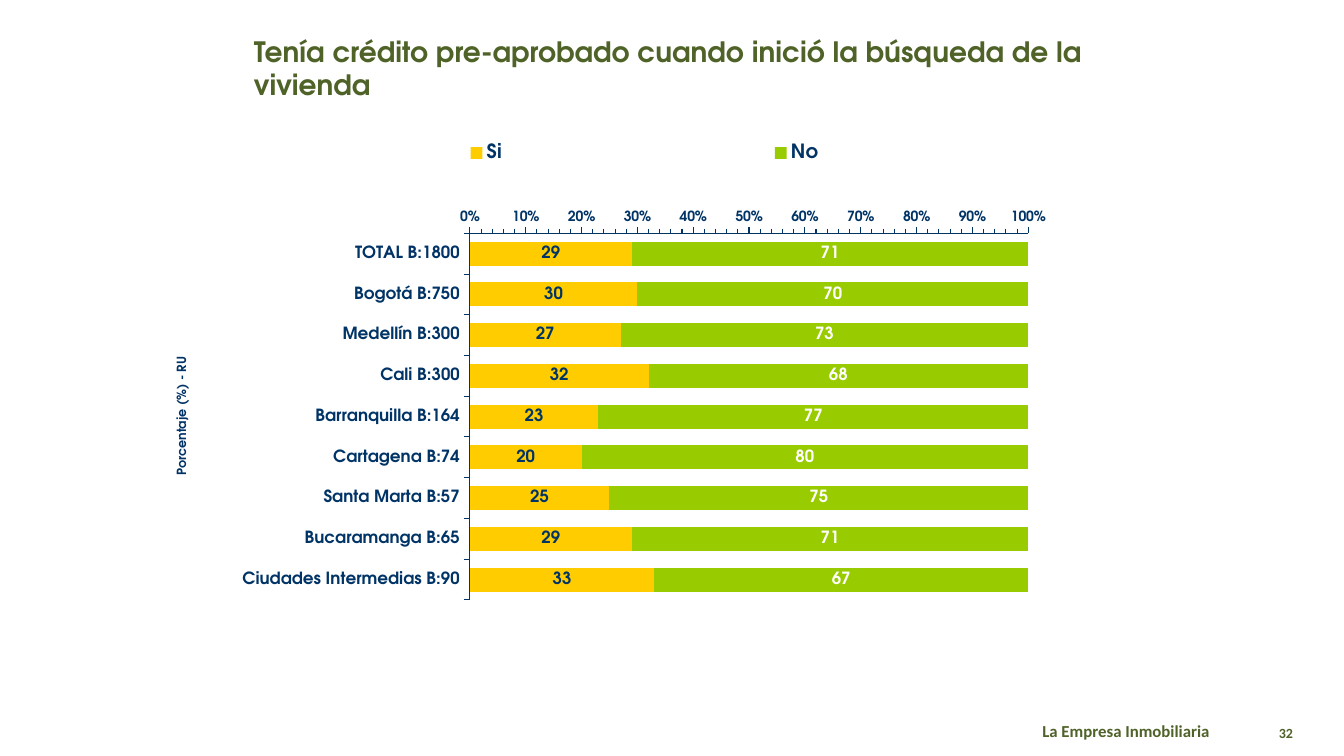
"""Build the pre-approved credit slide with its stacked bar chart by city."""
from dataclasses import dataclass

from pptx import Presentation, oxml
from pptx import util as u
from pptx.chart import data as cd
from pptx.dml.color import RGBColor
from pptx.enum import chart as ch, shapes, text
from pptx.oxml import ns

WIDTH, HEIGHT = u.Inches(13.33), u.Inches(7.5)
COLORS = {
    "white": "FFFFFF",
    "olive": "4F6228",
    "navy": "003366",
    "yellow": "FFCC00",
    "lime": "99CC00",
}
HEADING_FONT, FOOTER_FONT = "TeX Gyre Adventor", "Calibri"


@dataclass(frozen=True)
class Area:
    """Position and size in percent of the slide."""
    left: float
    top: float
    width: float
    height: float

    def frame(self) -> tuple[int, int, int, int]:
        return (int(WIDTH * self.left / 100), int(HEIGHT * self.top / 100),
                int(WIDTH * self.width / 100), int(HEIGHT * self.height / 100))


@dataclass(frozen=True)
class Label:
    words: str
    area: Area
    size: float
    font: str
    color: str
    align: text.PP_ALIGN = text.PP_ALIGN.LEFT
    anchor: text.MSO_ANCHOR = text.MSO_ANCHOR.TOP
    rotation: int = 0
    inset: tuple[float, float] = (0.1, 0.05)


@dataclass(frozen=True)
class Answer:
    name: str
    values: tuple[int, ...]
    fill: str
    label_color: str


CHART_AREA = Area(12.83, 14.27, 67.89, 71.87)
PAGE_NUMBER = Label("32", Area(93.32, 94.53, 4.73, 4.8), 10, FOOTER_FONT, "olive",
                    text.PP_ALIGN.CENTER, text.MSO_ANCHOR.MIDDLE, inset=(0, 0.05))
LABELS = (
    Label("La Empresa Inmobiliaria", Area(76.82, 94.67, 18.08, 4.4),
          12, FOOTER_FONT, "olive"),
    Label("Porcentaje (%) - RU", Area(7.43, 53.47, 12.08, 3.07), 9, HEADING_FONT,
          "navy", text.PP_ALIGN.CENTER, rotation=270, inset=(0.07, 0.04)),
    Label("Tenía crédito pre-aprobado cuando inició la búsqueda de la vivienda",
          Area(18.15, 3.87, 63.77, 10.53), 20, HEADING_FONT, "olive"),
)
CITIES = ("TOTAL B:1800", "Bogotá B:750", "Medellín B:300", "Cali B:300",
          "Barranquilla B:164", "Cartagena B:74", "Santa Marta B:57",
          "Bucaramanga B:65", "Ciudades Intermedias B:90")
ANSWERS = (
    Answer("Si", (29, 30, 27, 32, 23, 20, 25, 29, 33), "yellow", "navy"),
    Answer("No", (71, 70, 73, 68, 77, 80, 75, 71, 67), "lime", "white"),
)


def rgb(name: str) -> RGBColor:
    return RGBColor.from_string(COLORS[name])


def style_font(font, size: float, color: str, face: str = HEADING_FONT) -> None:
    font.size, font.bold, font.name = u.Pt(size), True, face
    font.color.rgb = rgb(color)


def write_label(box, label: Label) -> None:
    box.rotation = label.rotation
    frame = box.text_frame
    frame.word_wrap = True
    frame.vertical_anchor = label.anchor
    frame.margin_left = frame.margin_right = u.Inches(label.inset[0])
    frame.margin_top = frame.margin_bottom = u.Inches(label.inset[1])
    para = frame.paragraphs[0]
    para.alignment = label.align
    span = para.add_run()
    span.text = label.words
    style_font(span.font, label.size, label.color, label.font)


def add_page_number(page) -> None:
    badge = page.shapes.add_shape(shapes.MSO_SHAPE.OVAL, *PAGE_NUMBER.area.frame())
    badge.shadow.inherit = False
    badge.fill.solid()
    badge.fill.fore_color.rgb = rgb("white")
    badge.line.color.rgb = rgb("white")
    badge.line.width = u.Pt(2)
    write_label(badge, PAGE_NUMBER)


def place_part(parent, index: int, area: Area, inner: bool = False) -> None:
    """Give a chart part a manual layout in percent of the chart."""
    for old in parent.findall(ns.qn("c:layout")):
        parent.remove(old)
    target = '<c:layoutTarget val="inner"/>' if inner else ""
    modes = '<c:xMode val="edge"/><c:yMode val="edge"/>'
    sides = zip("xywh", (area.left, area.top, area.width, area.height))
    numbers = "".join(f'<c:{side} val="{share / 100:.3f}"/>' for side, share in sides)
    parent.insert(index, oxml.parse_xml(
        f'<c:layout {ns.nsdecls("c")}><c:manualLayout>{target}{modes}{numbers}'
        '</c:manualLayout></c:layout>'))


def style_axis(axis, size: float) -> None:
    axis.has_major_gridlines = False
    axis.major_tick_mark = ch.XL_TICK_MARK.OUTSIDE
    axis.format.line.color.rgb = rgb("navy")
    axis.format.line.width = u.Pt(0.75)
    style_font(axis.tick_labels.font, size, "navy")


def add_credit_chart(page) -> None:
    data = cd.CategoryChartData(number_format="0")
    data.categories = CITIES
    for answer in ANSWERS:
        data.add_series(answer.name, answer.values)
    chart = page.shapes.add_chart(ch.XL_CHART_TYPE.BAR_STACKED_100,
                                  *CHART_AREA.frame(), data).chart
    chart.has_title = False
    style_font(chart.font, 12, "navy")

    plot = chart.plots[0]
    plot.vary_by_categories = False
    plot.gap_width, plot.overlap = 70, 100
    for series, answer in zip(plot.series, ANSWERS):
        series.format.fill.solid()
        series.format.fill.fore_color.rgb = rgb(answer.fill)
        labels = series.data_labels
        labels.show_value = True
        labels.number_format, labels.number_format_is_linked = "0", False
        labels.position = ch.XL_LABEL_POSITION.CENTER
        style_font(labels.font, 12, answer.label_color)

    cities, shares = chart.category_axis, chart.value_axis
    style_axis(cities, 12)
    cities.reverse_order = True
    cities.crosses = ch.XL_AXIS_CROSSES.MAXIMUM
    style_axis(shares, 10)
    shares.minor_tick_mark = ch.XL_TICK_MARK.OUTSIDE
    shares.minimum_scale, shares.maximum_scale = 0, 1
    shares.major_unit, shares.minor_unit = 0.1, 0.02
    shares.tick_labels.number_format = "0%"
    shares.tick_labels.number_format_is_linked = False

    chart.has_legend = True
    legend = chart.legend
    legend.position = ch.XL_LEGEND_POSITION.TOP
    legend.include_in_layout = False
    style_font(legend.font, 14, "navy")
    legend_part = chart.element.find(".//" + ns.qn("c:legend"))
    place_part(legend_part, 1, Area(3.5, 3.8, 96.5, 9))
    plot_part = chart.element.find(".//" + ns.qn("c:plotArea"))
    place_part(plot_part, 0, Area(32.6, 23.1, 61.2, 67.5), inner=True)


def main() -> None:
    deck = Presentation()
    deck.slide_width, deck.slide_height = WIDTH, HEIGHT
    page = deck.slides.add_slide(deck.slide_layouts[6])
    add_page_number(page)
    add_credit_chart(page)
    for label in LABELS:
        write_label(page.shapes.add_textbox(*label.area.frame()), label)
    deck.save("out.pptx")


if __name__ == "__main__":
    main()
